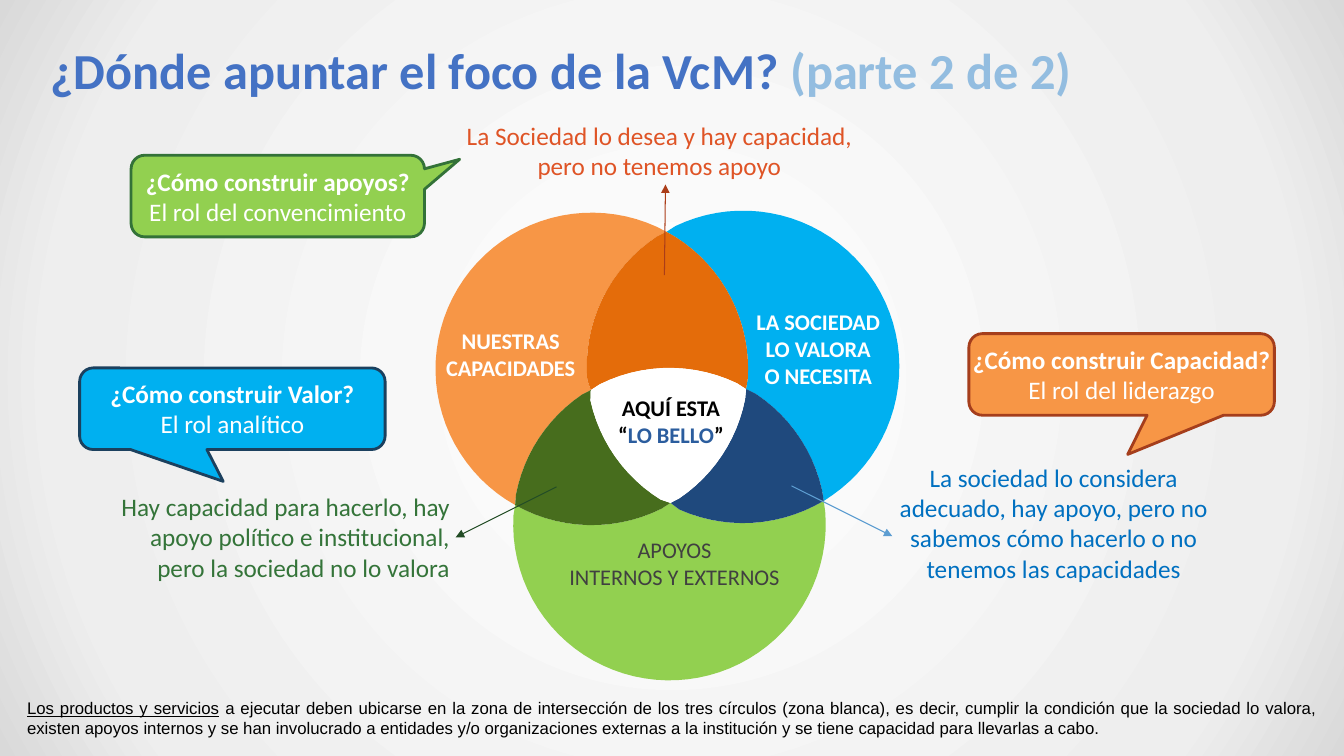
import math
from lxml import etree
from pptx import Presentation
from pptx.dml.color import RGBColor
from pptx.enum import shapes, text
from pptx.oxml import ns
from pptx.util import Inches, Pt

COLORS = {
    "white": "FFFFFF", "black": "000000", "mist": "EEEEEE", "gray": "D9D9D9", "charcoal": "404040",
    "orange": "F79646", "dark orange": "E46C0A", "rust": "A53E1C", "red": "DF5426", "brick": "AB3D19",
    "sky": "00B0F0", "navy": "1F497D", "ink": "1B405E", "blue": "0070C0", "steel": "5D9DD1",
    "lime": "92D050", "dark green": "476D1D", "forest": "337238", "leaf": "347439", "pine": "234D26",
    "title": "4472C4", "subtitle": "93BDE0", "accent": "2B5D9E",
}
LEFT, CENTER, RIGHT, JUSTIFY = (text.PP_ALIGN.LEFT, text.PP_ALIGN.CENTER,
                                text.PP_ALIGN.RIGHT, text.PP_ALIGN.JUSTIFY)


def write(frame, lines, size, color, align=CENTER, font="Calibri"):
    """Each line is a list of spans: (wording, {font settings})."""
    for number, line in enumerate(lines):
        para = frame.paragraphs[0] if number == 0 else frame.add_paragraph()
        para.alignment = align
        for wording, style in line:
            span = para.add_run()
            span.text = wording
            span.font.name, span.font.size = font, Pt(size)
            span.font.bold = style.get("bold", False)
            span.font.underline = style.get("underline", False)
            span.font.color.rgb = RGBColor.from_string(COLORS[style.get("color", color)])


def arc(circle, start, end, clockwise):
    """Points along a circle from start to end, in inches."""
    x, y, radius = circle
    first = math.atan2(start[1] - y, start[0] - x)
    last = math.atan2(end[1] - y, end[0] - x)
    sweep = (last - first) % math.tau if clockwise else -((first - last) % math.tau)
    steps = math.ceil(abs(sweep) / math.radians(4))
    inner = [first + sweep * step / steps for step in range(1, steps)]
    return [(x + radius * math.cos(a), y + radius * math.sin(a)) for a in inner] + [end]


deck = Presentation()
deck.slide_width, deck.slide_height = Inches(13.33), Inches(7.5)
page = deck.slides.add_slide(deck.slide_layouts[6])

# Background: radial gradient
page.background.fill.gradient()
gradient = page.element.find(".//" + ns.qn("a:gradFill"))
for child in list(gradient):
    gradient.remove(child)
stops = etree.SubElement(gradient, ns.qn("a:gsLst"))
for position, color in [(0, "white"), (81, "mist"), (100, "gray")]:
    stop = etree.SubElement(stops, ns.qn("a:gs"), pos=str(position * 1000))
    etree.SubElement(stop, ns.qn("a:srgbClr"), val=COLORS[color])
radial = etree.SubElement(gradient, ns.qn("a:path"), path="circle")
etree.SubElement(radial, ns.qn("a:fillToRect"), l="50000", t="50000", r="50000", b="50000")

# Venn diagram: three circles and the points where they cross
ability, society, support = (5.87, 3.66, 1.55), (7.37, 3.64, 1.55), (6.64, 5.2, 1.55)
top, left, right = (6.61, 2.3), (5.11, 5.01), (8.17, 4.97)
inner_left, inner_right, inner_bottom = (5.86, 3.87), (7.4, 3.86), (6.65, 4.99)
regions = [  # color, start, arcs as (circle, end, clockwise)
    ("orange", left, [(ability, top, True), (society, inner_left, False), (support, left, False)]),
    ("sky", top, [(society, right, True), (support, inner_right, False), (ability, top, False)]),
    ("dark orange", top, [(ability, inner_right, True), (support, inner_left, False),
                          (society, top, True)]),
    ("lime", right, [(support, left, True), (ability, inner_bottom, False),
                     (society, right, False)]),
    ("dark green", inner_left, [(society, inner_bottom, False), (ability, left, True),
                                (support, inner_left, True)]),
    ("navy", inner_right, [(support, right, True), (society, inner_bottom, True),
                           (ability, inner_right, False)]),
    ("white", inner_left, [(support, inner_right, True), (ability, inner_bottom, True),
                           (society, inner_left, True)]),
]
for color, start, edges in regions:
    outline, corner = [], start
    for circle, end, clockwise in edges:
        outline += arc(circle, corner, end, clockwise)
        corner = end
    builder = page.shapes.build_freeform(Inches(start[0]), Inches(start[1]))
    builder.add_line_segments([(Inches(x), Inches(y)) for x, y in outline])
    region = builder.convert_to_shape()
    region.shadow.inherit = False
    region.fill.solid()
    region.fill.fore_color.rgb = RGBColor.from_string(COLORS[color])
    region.line.fill.background()

# Callouts: the three roles
callouts = [
    ((1.3, 1.54, 2.91, 0.81), (0.62, -0.45), "lime", "forest",
     "¿Cómo construir apoyos?", "El rol del convencimiento"),
    ((9.61, 3.31, 3.03, 0.81), (0.02, 0.98), "orange", "rust",
     "¿Cómo construir Capacidad?", "El rol del liderazgo"),
    ((0.79, 3.65, 3.03, 0.81), (-0.03, 0.89), "sky", "ink",
     "¿Cómo construir Valor?", "El rol analítico"),
]
for place, tip, fill, edge, question, role in callouts:
    callout = page.shapes.add_shape(shapes.MSO_SHAPE.ROUNDED_RECTANGULAR_CALLOUT,
                                    *[Inches(value) for value in place])
    callout.adjustments[0], callout.adjustments[1] = tip
    callout.shadow.inherit = False
    callout.fill.solid()
    callout.fill.fore_color.rgb = RGBColor.from_string(COLORS[fill])
    callout.line.color.rgb = RGBColor.from_string(COLORS[edge])
    callout.line.width = Pt(2)
    frame = callout.text_frame
    frame.margin_left = frame.margin_right = 0
    frame.word_wrap = False
    frame.vertical_anchor = text.MSO_ANCHOR.MIDDLE
    write(frame, [[(question, {"bold": True})], [(role, {})]], 18, "white")

# Text: title, circle labels, explanations and footnote
bold = {"bold": True}
boxes = [  # place, wrap, lines, size, color, alignment, font
    ((0.4, 0.3, 11.6, 0.78), True,
     [[("¿Dónde apuntar el foco de la VcM?", bold),
       (" (parte 2 de 2)", {"bold": True, "color": "subtitle"})]], 36, "title", LEFT, "Calibri"),
    ((4.3, 3.19, 1.53, 0.64), False,
     [[("NUESTRAS", bold)], [("CAPACIDADES", bold)]], 16, "white", CENTER, "Calibri"),
    ((7.39, 3, 1.45, 0.91), False,
     [[("LA SOCIEDAD", bold)], [("LO VALORA", bold)], [("O NECESITA", bold)]],
     16, "white", CENTER, "Calibri"),
    ((5.53, 5.27, 2.32, 0.64), False,
     [[("APOYOS", {})], [("INTERNOS Y EXTERNOS", {})]], 16, "charcoal", CENTER, "Calibri"),
    ((6.02, 3.86, 1.27, 0.64), False,
     [[("AQUÍ ESTA", bold)],
      [("“", bold), ("LO BELLO", {"bold": True, "color": "accent"}), ("”", bold)]],
     16, "black", CENTER, "Calibri"),
    ((4.47, 1.14, 4.14, 0.71), False,
     [[("La Sociedad lo desea y hay capacidad,", {})], [("pero no tenemos apoyo", {})]],
     18, "red", CENTER, "Calibri"),
    ((0.97, 4.82, 3.59, 1.01), True,
     [[("Hay capacidad para hacerlo, hay apoyo político e institucional, "
        "pero la sociedad no lo valora", {})]], 18, "leaf", RIGHT, "Calibri"),
    ((8.69, 4.53, 3.52, 1.31), True,
     [[("La sociedad lo considera adecuado, hay apoyo, pero no sabemos cómo hacerlo "
        "o no tenemos las capacidades", {})]], 18, "blue", CENTER, "Calibri"),
    ((0.17, 6.87, 13, 0.5), True,
     [[("Los productos y servicios", {"underline": True}),
       (" a ejecutar deben ubicarse en la zona de intersección de los tres círculos (zona blanca), "
        "es decir, cumplir la condición que la sociedad lo valora, existen apoyos internos y se han "
        "involucrado a entidades y/o organizaciones externas a la institución y se tiene capacidad "
        "para llevarlas a cabo.", {})]], 12, "black", JUSTIFY, "Arial"),
]
for place, wrap, lines, size, color, align, font in boxes:
    box = page.shapes.add_textbox(*[Inches(value) for value in place])
    box.text_frame.word_wrap = wrap
    box.text_frame.vertical_anchor = text.MSO_ANCHOR.MIDDLE
    write(box.text_frame, lines, size, color, align, font)

# Arrows from the overlaps to their explanations
for x1, y1, x2, y2, color in [(6.59, 2.73, 6.6, 1.83, "brick"), (5.52, 4.83, 4.52, 5.33, "pine"),
                              (7.85, 4.82, 8.85, 5.32, "steel")]:
    arrow = page.shapes.add_connector(shapes.MSO_CONNECTOR.STRAIGHT,
                                      Inches(x1), Inches(y1), Inches(x2), Inches(y2))
    arrow.line.color.rgb = RGBColor.from_string(COLORS[color])
    arrow.line.width = Pt(0.75)
    etree.SubElement(arrow.line._get_or_add_ln(), ns.qn("a:tailEnd"), type="triangle")
    etree.SubElement(arrow.element.spPr, ns.qn("a:effectLst"))

deck.save("out.pptx")
